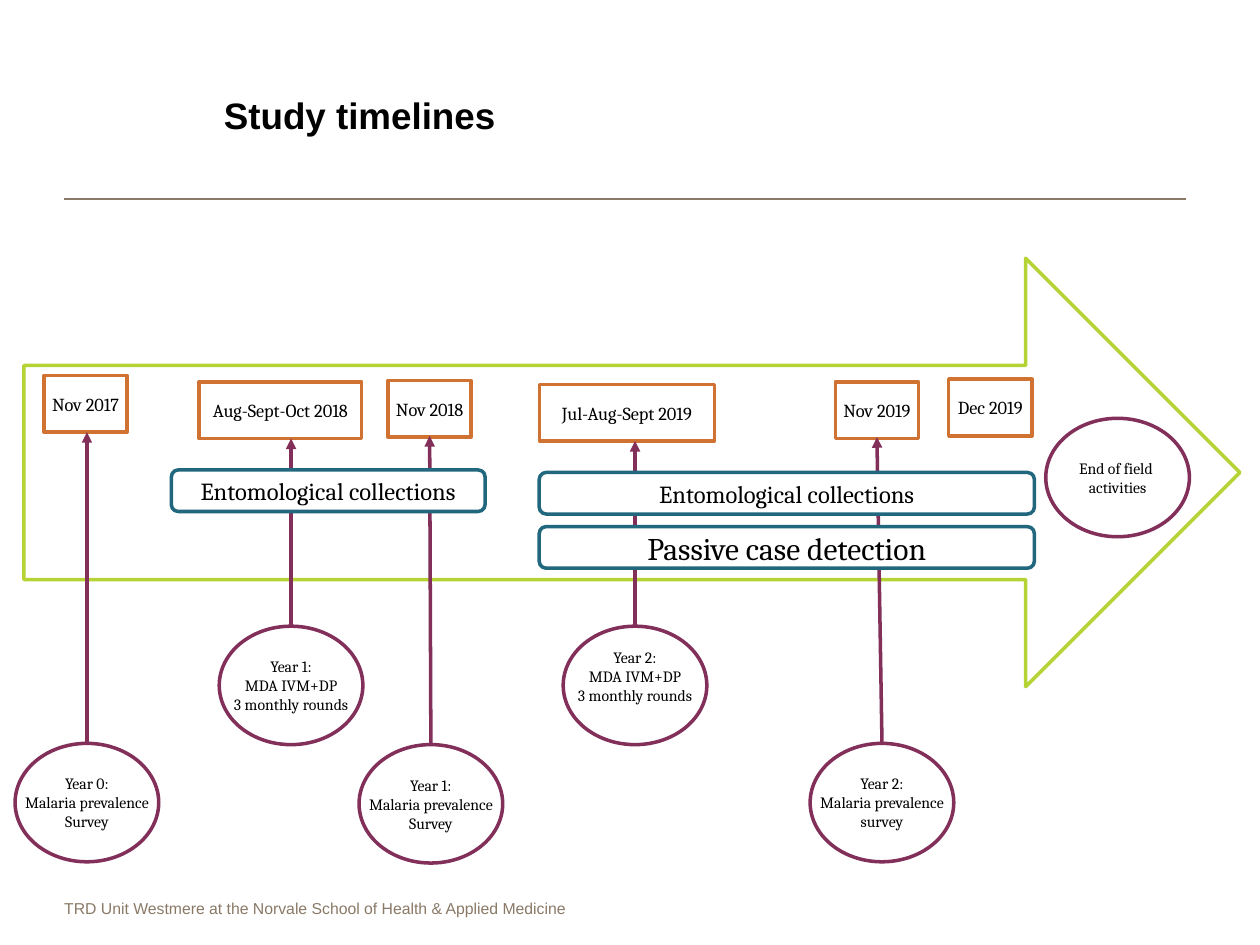
from typing import NamedTuple

import pptx
import pptx.dml.color
import pptx.enum.shapes
import pptx.enum.text
import pptx.oxml
import pptx.oxml.ns
import pptx.util

Inches = pptx.util.Inches
Pt = pptx.util.Pt
RGBColor = pptx.dml.color.RGBColor
SHAPE = pptx.enum.shapes.MSO_SHAPE
CENTER = pptx.enum.text.PP_ALIGN.CENTER

BLACK = RGBColor(0x00, 0x00, 0x00)
WHITE = RGBColor(0xFF, 0xFF, 0xFF)
TAUPE = RGBColor(0x8A, 0x79, 0x67)
PLUM = RGBColor(0x82, 0x2F, 0x5A)
LIME = RGBColor(0xB5, 0xD3, 0x34)
ORANGE = RGBColor(0xD0, 0x72, 0x32)
TEAL = RGBColor(0x21, 0x67, 0x7E)

DATE_HEIGHT = 0.45
BAR_HEIGHT = 0.33
EVENT_WIDTH, EVENT_HEIGHT = 1.14, 0.94


class DateBox(NamedTuple):
    left: float
    top: float
    width: float
    text: str


class Event(NamedTuple):
    left: float
    top: float
    lines: tuple[str, ...]
    arrow_tip: tuple[float, float] | None = None
    bottom_inset: float = 0.04


class ActivityBar(NamedTuple):
    left: float
    top: float
    width: float
    text: str
    size: float


DATES = [
    DateBox(0.35, 2.98, 0.66, "Nov 2017"),
    DateBox(1.58, 3.03, 1.29, "Aug-Sept-Oct 2018"),
    DateBox(3.08, 3.02, 0.66, "Nov 2018"),
    DateBox(4.28, 3.05, 1.39, "Jul-Aug-Sept 2019"),
    DateBox(6.63, 3.03, 0.66, "Nov 2019"),
    DateBox(7.53, 3.01, 0.66, "Dec 2019"),
]
ROUNDS = ("MDA IVM+DP", "3 monthly rounds")
EVENTS = [
    Event(0.12, 5.9, ("Year 0:", "Malaria prevalence", "Survey"), (0.69, 3.43)),
    Event(1.74, 4.97, ("Year 1:", *ROUNDS), (2.31, 3.48)),
    Event(2.85, 5.91, ("Year 1:", "Malaria prevalence", "Survey"), (3.41, 3.46)),
    Event(4.47, 4.97, ("Year 2:", *ROUNDS), (5.04, 3.5), 0.19),
    Event(6.43, 5.9, ("Year 2:", "Malaria prevalence", "survey"), (6.96, 3.47)),
    Event(8.3, 3.32, ("End of field ", "activities")),
]
BARS = [
    ActivityBar(1.36, 3.73, 2.49, "Entomological collections", 14),
    ActivityBar(4.28, 3.75, 3.93, "Entomological collections", 14),
    ActivityBar(4.28, 4.18, 3.93, "Passive case detection", 18),
]


def write_lines(frame, lines: tuple[str, ...], size: float, font: str,
                color: RGBColor = BLACK, bold: bool = False, align=CENTER) -> None:
    for index, text in enumerate(lines):
        para = frame.add_paragraph() if index else frame.paragraphs[0]
        para.alignment = align
        span = para.add_run()
        span.text = text
        span.font.size = Pt(size)
        span.font.name = font
        span.font.bold = bold
        span.font.color.rgb = color


def add_outlined(page, kind, left: float, top: float, width: float, height: float,
                 color: RGBColor, lines: tuple[str, ...] = (), size: float = 9,
                 bottom_inset: float = 0.04) -> None:
    box = page.shapes.add_shape(kind, Inches(left), Inches(top), Inches(width), Inches(height))
    box.shadow.inherit = False
    box.fill.solid()
    box.fill.fore_color.rgb = WHITE
    box.line.color.rgb = color
    box.line.width = Pt(2)
    frame = box.text_frame
    frame.word_wrap = False
    frame.vertical_anchor = pptx.enum.text.MSO_ANCHOR.MIDDLE
    frame.margin_left = frame.margin_right = Inches(0.07)
    frame.margin_top = Inches(0.04)
    frame.margin_bottom = Inches(bottom_inset)
    write_lines(frame, lines, size, "Cambria")


def add_line(page, start: tuple[float, float], end: tuple[float, float],
             color: RGBColor, width: float, arrow: bool = False) -> None:
    line = page.shapes.add_connector(
        pptx.enum.shapes.MSO_CONNECTOR.STRAIGHT, *map(Inches, start + end))
    line.line.color.rgb = color
    line.line.width = Pt(width)
    properties = line.element.spPr
    if arrow:
        head = pptx.oxml.parse_xml(
            f'<a:tailEnd {pptx.oxml.ns.nsdecls("a")} type="triangle"/>')
        properties.find(pptx.oxml.ns.qn("a:ln")).append(head)
    properties.append(pptx.oxml.parse_xml(f'<a:effectLst {pptx.oxml.ns.nsdecls("a")}/>'))


def add_text(page, left: float, top: float, width: float, height: float, text: str,
             size: float, color: RGBColor, bold: bool, align, side_inset: float) -> None:
    box = page.shapes.add_textbox(Inches(left), Inches(top), Inches(width), Inches(height))
    frame = box.text_frame
    frame.word_wrap = True
    frame.margin_left = frame.margin_right = Inches(side_inset)
    write_lines(frame, (text,), size, "Arial", color, bold, align)


def main() -> None:
    deck = pptx.Presentation()
    deck.slide_width, deck.slide_height = Inches(10), Inches(7.5)
    page = deck.slides.add_slide(deck.slide_layouts[6])

    # Heading rule, footer and title
    add_line(page, (0.51, 1.58), (9.41, 1.58), TAUPE, 1.5)
    add_text(page, 0.51, 7.08, 5.4, 0.25,
             "TRD Unit Westmere at the Norvale School of Health & Applied Medicine",
             9, TAUPE, False, pptx.enum.text.PP_ALIGN.LEFT, 0)
    add_text(page, 0.98, 0.69, 3.75, 0.45, "Study timelines", 21, BLACK, True, CENTER, 0.1)

    # Timeline arrow and its dates
    add_outlined(page, SHAPE.RIGHT_ARROW, 0.19, 2.05, 9.65, 3.4, LIME)
    for date in DATES:
        add_outlined(page, SHAPE.RECTANGLE, date.left, date.top, date.width, DATE_HEIGHT,
                     ORANGE, (date.text,), 10.5)

    # Events, each pointing up to its date
    for event in EVENTS:
        if event.arrow_tip:
            start = (event.left + EVENT_WIDTH / 2, event.top)
            add_line(page, start, event.arrow_tip, PLUM, 2, arrow=True)
        add_outlined(page, SHAPE.OVAL, event.left, event.top, EVENT_WIDTH, EVENT_HEIGHT,
                     PLUM, event.lines, bottom_inset=event.bottom_inset)

    # Activity bars over the event arrows
    for bar in BARS:
        add_outlined(page, SHAPE.ROUNDED_RECTANGLE, bar.left, bar.top, bar.width, BAR_HEIGHT,
                     TEAL, (bar.text,), bar.size)

    deck.save("out.pptx")


if __name__ == "__main__":
    main()
